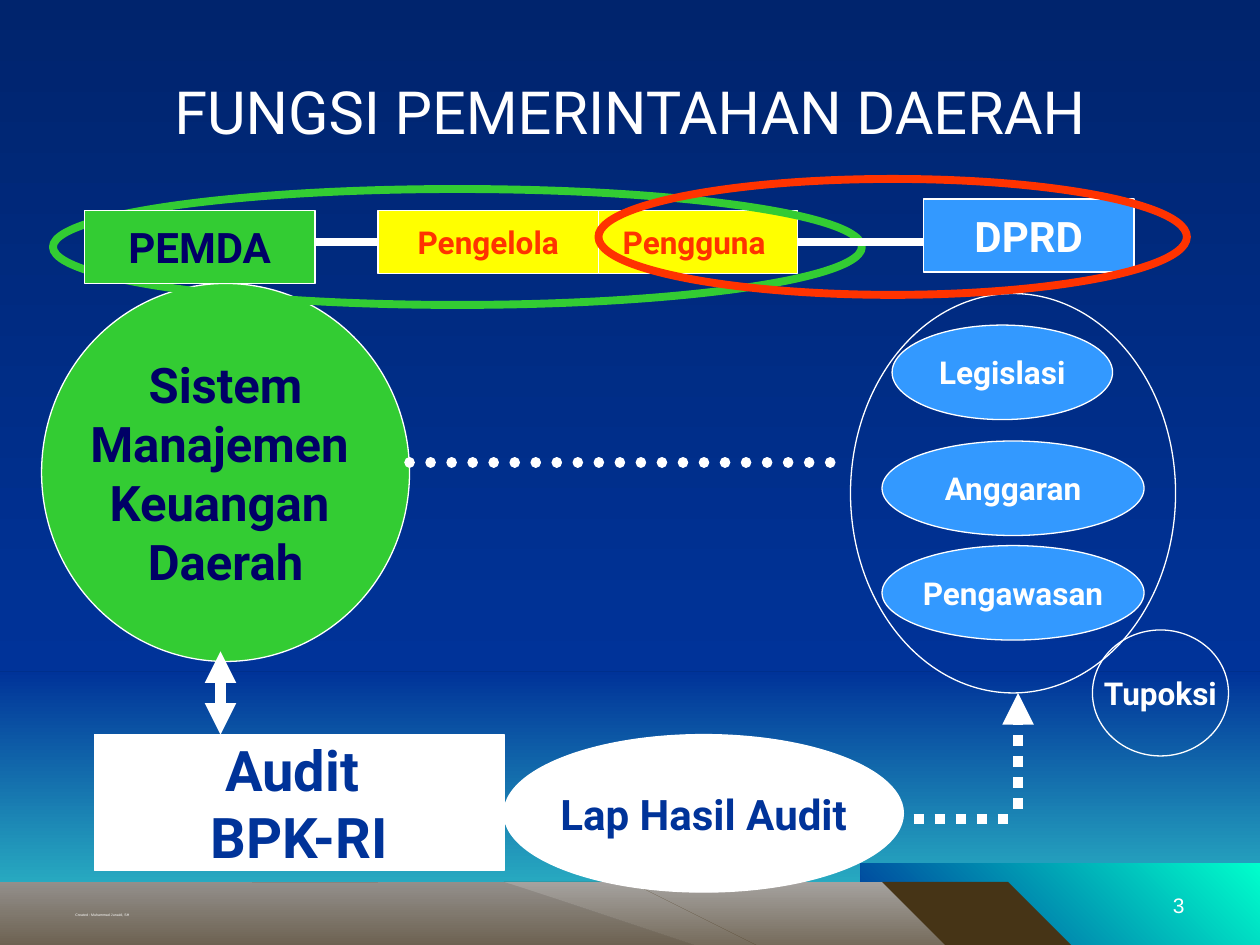
from dataclasses import dataclass
from typing import Optional

from lxml import etree
from pptx import Presentation
from pptx.dml.color import RGBColor
from pptx.enum.dml import MSO_LINE
from pptx.enum.shapes import MSO_CONNECTOR, MSO_SHAPE
from pptx.enum.text import MSO_ANCHOR, PP_ALIGN
from pptx.oxml.ns import qn
from pptx.util import Inches, Pt

RECT, OVAL = MSO_SHAPE.RECTANGLE, MSO_SHAPE.OVAL
STRAIGHT, DOTTED = MSO_CONNECTOR.STRAIGHT, MSO_LINE.ROUND_DOT
LEFT, CENTER, RIGHT = PP_ALIGN.LEFT, PP_ALIGN.CENTER, PP_ALIGN.RIGHT
MIDDLE, BOTTOM = MSO_ANCHOR.MIDDLE, MSO_ANCHOR.BOTTOM
LEFT_SIDE, RIGHT_SIDE = 1, 3

WHITE, GREEN, YELLOW, RED = "FFFFFF", "33CC33", "FFFF00", "FF3300"
SKY, BLUE, NAVY, NIGHT = "3399FF", "003399", "000066", "00246D"
EARTH = "463416"


@dataclass
class Node:
    kind: int
    box: tuple
    fill: Optional[str] = None
    text: str = ""
    size: float = 18
    color: str = WHITE
    line: str = WHITE
    weight: float = 0.75


@dataclass
class Link:
    start: tuple
    end: tuple
    weight: float = 6
    dotted: bool = False
    round_cap: bool = False
    head: bool = False
    tail: bool = False
    begin_node: Optional[str] = None
    end_node: Optional[str] = None


@dataclass
class Ridge:
    points: list
    top_color: Optional[str] = None


def rgb(value: str) -> RGBColor:
    return RGBColor.from_string(value)


def fill_gradient(fill, first: str, last: str, angle: float = 270) -> None:
    fill.gradient()
    fill.gradient_angle = angle
    for stop, color in zip(fill.gradient_stops, (first, last)):
        stop.color.rgb = rgb(color)


def write_text(frame, text: str, *, size: float, color: str = WHITE, font: str = "Roboto",
               bold: bool = False, align=CENTER, anchor=MIDDLE, wrap: bool = False) -> None:
    frame.word_wrap = wrap
    frame.vertical_anchor = anchor
    for index, line in enumerate(text.split("\n")):
        paragraph = frame.paragraphs[0] if index == 0 else frame.add_paragraph()
        paragraph.alignment = align
        run = paragraph.add_run()
        run.text = line
        run.font.name, run.font.size, run.font.bold = font, Pt(size), bold
        run.font.color.rgb = rgb(color)


def add_text(slide, box: tuple, text: str, **text_format) -> None:
    frame = slide.shapes.add_textbox(*map(Inches, box)).text_frame
    write_text(frame, text, wrap=True, **text_format)


def add_band(slide, box: tuple, first: str, last: str, angle: float = 270) -> None:
    band = slide.shapes.add_shape(RECT, *map(Inches, box))
    band.shadow.inherit = False
    band.line.fill.background()
    fill_gradient(band.fill, first, last, angle)


def add_ridge(slide, ridge: Ridge) -> None:
    builder = slide.shapes.build_freeform(*ridge.points[0], scale=Inches(1))
    builder.add_line_segments(ridge.points[1:], close=True)
    shape = builder.convert_to_shape()
    shape.shadow.inherit = False
    shape.line.fill.background()
    if ridge.top_color:
        fill_gradient(shape.fill, ridge.top_color, EARTH)
    else:
        shape.fill.solid()
        shape.fill.fore_color.rgb = rgb(EARTH)


def add_node(slide, node: Node):
    shape = slide.shapes.add_shape(node.kind, *map(Inches, node.box))
    shape.shadow.inherit = False
    if node.fill:
        shape.fill.solid()
        shape.fill.fore_color.rgb = rgb(node.fill)
    else:
        shape.fill.background()
    shape.line.color.rgb = rgb(node.line)
    shape.line.width = Pt(node.weight)
    if node.text:
        write_text(shape.text_frame, node.text, size=node.size, color=node.color, bold=True)
    return shape


def add_link(slide, link: Link, drawn: dict) -> None:
    connector = slide.shapes.add_connector(STRAIGHT, *map(Inches, link.start + link.end))
    if link.begin_node:
        connector.begin_connect(drawn[link.begin_node], RIGHT_SIDE)
    if link.end_node:
        connector.end_connect(drawn[link.end_node], LEFT_SIDE)
    connector.line.color.rgb = rgb(WHITE)
    connector.line.width = Pt(link.weight)
    if link.dotted:
        connector.line.dash_style = DOTTED
    properties = connector._element.spPr
    outline = properties.find(qn("a:ln"))
    if link.round_cap:
        outline.set("cap", "rnd")
    for tag, wanted in (("a:headEnd", link.head), ("a:tailEnd", link.tail)):
        if wanted:
            etree.SubElement(outline, qn(tag), type="triangle")
    etree.SubElement(properties, qn("a:effectLst"))


RIDGES = [
    Ridge([(2.58, 7.5), (3.55, 6.98), (4.7, 6.58), (5.66, 6.97), (6.85, 6.6),
           (7.23, 6.98), (7.64, 7.23), (8.2, 7.5)], "A5A29F"),
    Ridge([(6.85, 6.6), (6.98, 7.02), (6.93, 7.33), (7.2, 7.17), (7.9, 7.5), (8.55, 7.5),
           (7.96, 7.24), (7.71, 7.24), (7.34, 7.03)]),
    Ridge([(4.71, 6.58), (4.65, 7.27), (4.97, 6.71)]),
    Ridge([(5.29, 6.76), (5.8, 7.23), (5.92, 6.89)]),
    Ridge([(0, 6.9), (0.26, 6.85), (0.68, 6.62), (2.1, 6.58), (2.6, 6.76), (3.54, 6.65),
           (4.32, 7.12), (6.9, 7.5), (0, 7.5)], "938F8B"),
    Ridge([(2.12, 6.63), (2.41, 6.88), (2.67, 7.09), (2.61, 6.89)]),
    Ridge([(3.54, 6.65), (3.74, 7.12), (4.07, 7.27), (4.72, 7.27), (6.9, 7.5), (4.55, 7.07)]),
    Ridge([(0.69, 6.62), (1, 6.98), (1.11, 6.69)]),
]

# Back to front: later items overlap earlier ones.
DIAGRAM = [
    Node(RECT, (7.33, 1.58, 1.67, 0.58), SKY, "DPRD", 24),
    Node(OVAL, (0.33, 2.25, 2.92, 3), GREEN, "Sistem\nManajemen \nKeuangan \nDaerah", 28, NAVY),
    Node(RECT, (0.75, 5.83, 3.25, 1.08), WHITE, "Audit \nBPK-RI", 32, BLUE),
    Node(OVAL, (4, 5.83, 3.17, 1.25), WHITE, "Lap Hasil Audit", 24, BLUE),
    Node(OVAL, (7, 3.5, 2.08, 0.75), SKY, "Anggaran"),
    Node(OVAL, (7.08, 2.58, 1.75, 0.75), SKY, "Legislasi"),
    Node(OVAL, (7, 4.33, 2.08, 0.75), SKY, "Pengawasan"),
    Link((7.25, 6.5), (8.08, 6.5), dotted=True),
    Link((8.08, 6.42), (8.08, 5.5), dotted=True, tail=True),
    Node(RECT, (4.75, 1.67, 1.58, 0.5), YELLOW, "Pengguna ", color=RED),
    Link((3.25, 3.67), (6.75, 3.67), dotted=True, round_cap=True),
    Node(OVAL, (6.75, 2.33, 2.58, 3.17)),
    Node(OVAL, (8.67, 5, 1.08, 1), text="Tupoksi"),
    Link((1.75, 5.17), (1.75, 5.83), head=True, tail=True),
    Node(RECT, (3, 1.67, 1.75, 0.5), YELLOW, "Pengelola", color=RED),
    Node(OVAL, (0.42, 1.5, 6.42, 0.92), line=GREEN, weight=4.5),
    Node(RECT, (0.67, 1.67, 1.83, 0.58), GREEN, "PEMDA", 24, NAVY),
    Link((2.5, 1.92), (3, 1.92), 4.5, end_node="Pengelola"),
    Node(OVAL, (4.75, 1.42, 4.67, 0.92), line=RED, weight=4.5),
    Link((6.33, 1.92), (7.33, 1.92), 4.5, begin_node="Pengguna "),
]


def main() -> None:
    deck = Presentation()
    deck.slide_width, deck.slide_height = Inches(10), Inches(7.5)
    slide = deck.slides.add_slide(deck.slide_layouts[6])
    fill_gradient(slide.background.fill, NIGHT, BLUE)
    add_band(slide, (0, 5.33, 10, 2.17), BLUE, "33CCCC")
    add_band(slide, (0, 0, 10, 5.33), NIGHT, BLUE)
    add_band(slide, (6.83, 6.85, 3.17, 0.65), BLUE, "00FFCC", 45)
    for ridge in RIDGES:
        add_ridge(slide, ridge)
    add_text(slide, (0.5, 6.83, 2.33, 0.5), "Created : Muhammad Junaidi, SH",
             size=2, font="Arial", align=LEFT, anchor=BOTTOM)
    add_text(slide, (7.17, 6.83, 2.33, 0.5), "3",
             size=12, font="Arial", align=RIGHT, anchor=BOTTOM)
    add_text(slide, (0.5, 0.25, 9, 1.25), "FUNGSI PEMERINTAHAN DAERAH", size=34)
    drawn = {}
    for item in DIAGRAM:
        if isinstance(item, Node):
            drawn[item.text] = add_node(slide, item)
        else:
            add_link(slide, item, drawn)
    deck.save("out.pptx")


if __name__ == "__main__":
    main()
